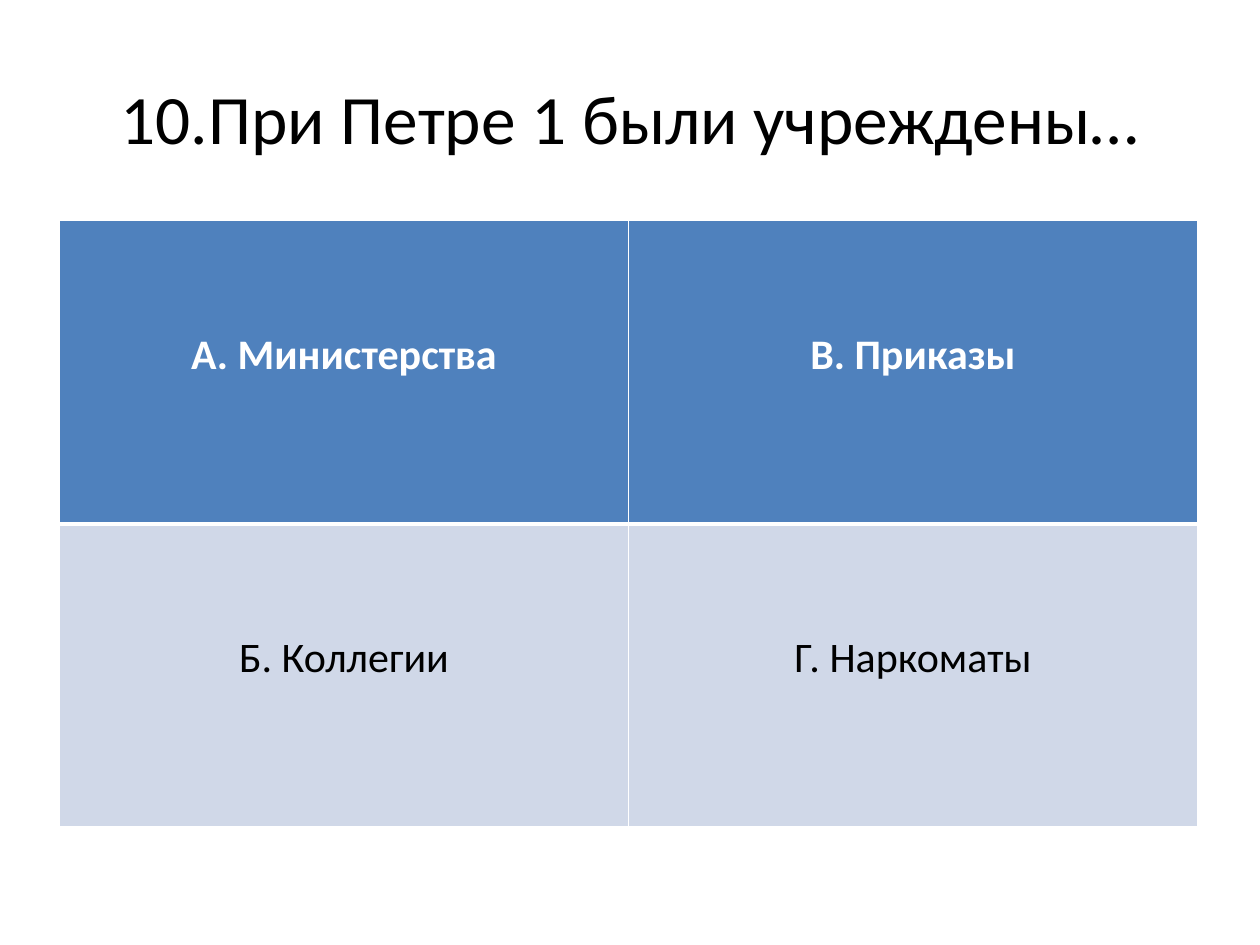
from lxml import etree
from pptx import Presentation
from pptx import util as u
from pptx.dml.color import RGBColor
from pptx.enum import text
from pptx.oxml import ns

TITLE = "10.При Петре 1 были учреждены…"
ANSWERS = [["А. Министерства", "В. Приказы"], ["Б. Коллегии", "Г. Наркоматы"]]
TITLE_FONT = {"size": u.Pt(39.6), "name": "Calibri", "bold": False}
ROW_STYLES = [
    {"fill": "4F81BD", "color": "FFFFFF", "bold": True,
     "borders": {"L": 1, "R": 1, "T": 1, "B": 3}},
    {"fill": "D0D8E8", "color": "000000", "bold": False,
     "borders": {"L": 1, "R": 1, "T": 3, "B": 1}},
]


def rgb(value):
    """Return the colour for a hex string."""
    return RGBColor.from_string(value)


def set_attributes(target, values):
    """Set every attribute named in a dict."""
    for name, value in values.items():
        setattr(target, name, value)


def write_paragraph(frame, content, color, font):
    """Write one centred, formatted paragraph into a text frame."""
    paragraph = frame.paragraphs[0]
    paragraph.alignment = text.PP_ALIGN.CENTER
    run = paragraph.add_run()
    run.text = content
    set_attributes(run.font, font)
    run.font.color.rgb = rgb(color)


def add_title(slide):
    """Place and fill the title placeholder."""
    title = slide.shapes.title
    set_attributes(title, {"left": u.Cm(1.27), "top": u.Cm(0.76),
                           "width": u.Cm(22.86), "height": u.Cm(3.18)})
    set_attributes(title.text_frame, {
        "vertical_anchor": text.MSO_ANCHOR.MIDDLE,
        "auto_size": text.MSO_AUTO_SIZE.NONE,
        "word_wrap": True,
    })
    write_paragraph(title.text_frame, TITLE, "000000", TITLE_FONT)


def add_borders(cell, widths, color):
    """Draw solid cell borders with a width in points for each side."""
    properties = cell._tc.get_or_add_tcPr()
    for side, width in widths.items():
        line = etree.SubElement(properties, ns.qn(f"a:ln{side}"), w=str(u.Pt(width)))
        fill = etree.SubElement(line, ns.qn("a:solidFill"))
        etree.SubElement(fill, ns.qn("a:srgbClr"), val=color)


def format_cell(cell, content, style):
    """Fill, border and label one answer cell."""
    add_borders(cell, style["borders"], "FFFFFF")
    cell.fill.solid()
    cell.fill.fore_color.rgb = rgb(style["fill"])
    set_attributes(cell, {"margin_top": u.Cm(2.19),
                          "vertical_anchor": text.MSO_ANCHOR.TOP})
    font = {"size": u.Pt(24), "name": "Calibri", "bold": style["bold"]}
    write_paragraph(cell.text_frame, content, style["color"], font)


def add_answers(slide):
    """Add the table of four answers."""
    table = slide.shapes.add_table(
        len(ANSWERS), len(ANSWERS[0]),
        u.Cm(1.2), u.Cm(4.45), u.Cm(22.94), u.Cm(12.22)).table
    for row, (answers, style) in enumerate(zip(ANSWERS, ROW_STYLES)):
        for column, answer in enumerate(answers):
            format_cell(table.cell(row, column), answer, style)


def main():
    """Build the quiz slide."""
    presentation = Presentation()
    set_attributes(presentation, {"slide_width": u.Cm(25.4), "slide_height": u.Cm(19.05)})
    slide = presentation.slides.add_slide(presentation.slide_layouts[5])
    add_title(slide)
    add_answers(slide)
    presentation.save("out.pptx")


if __name__ == "__main__":
    main()
